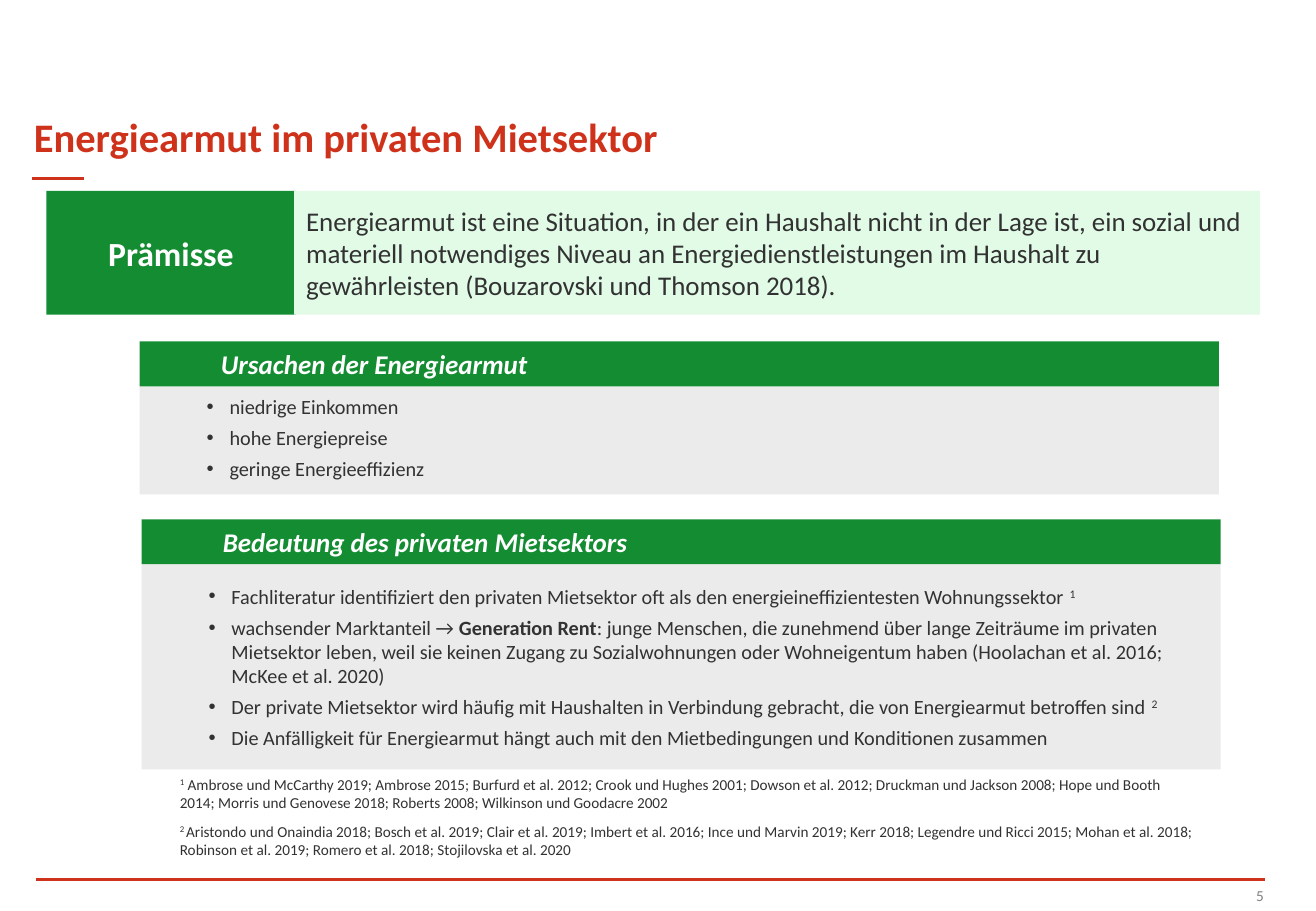
from lxml.etree import SubElement as Sub
from pptx import Presentation
from pptx.dml.color import RGBColor as RGB
from pptx.enum.shapes import MSO_CONNECTOR as Link, MSO_SHAPE as Form
from pptx.enum.text import MSO_ANCHOR as Anchor, PP_ALIGN as Align
from pptx.oxml.ns import qn
from pptx.util import Cm, Pt

HUES = {"red": "CE321A", "green": "148C32", "mint": "E1FBE7",
        "grey": "EBEBEB", "ink": "323232", "white": "FFFFFF", "mute": "808080"}
HANG = Cm(0.48)
INSET = (0.25, 0.13, 0.25, 0.13)
RAISE = {"raised": True}
BOLD = {"bold": True}


class Board:
    """Holds the style and the current slide."""

    def __init__(self, width, height, face):
        self.deck = Presentation()
        self.deck.slide_width, self.deck.slide_height = Cm(width), Cm(height)
        self.slide = self.deck.slides.add_slide(self.deck.slide_layouts[6])
        self.face = face

    def hue(self, name):
        return RGB.from_string(HUES[name])

    def run(self, para, text, size, color, raised=False, **style):
        run = para.add_run()
        run.text = text
        form = {"name": self.face, "size": Pt(size), **style}
        for key, value in form.items():
            setattr(run.font, key, value)
        run.font.color.rgb = self.hue(color)
        if raised:
            run.font._element.set("baseline", "30000")

    def dot(self, para):
        props = para._p.get_or_add_pPr()
        for key, value in {"marL": HANG, "indent": -HANG}.items():
            props.set(key, str(int(value)))
        Sub(props, qn("a:buFont")).set("typeface", "Arial")
        Sub(props, qn("a:buChar")).set("char", "•")

    def fill(self, shape, paras, size, color, inset=INSET, anchor=Anchor.MIDDLE,
             align=Align.LEFT, after=0, dots=False, **style):
        frame = shape.text_frame
        left, top, right, low = map(Cm, inset)
        form = {"word_wrap": True, "vertical_anchor": anchor, "margin_left": left,
                "margin_top": top, "margin_right": right, "margin_bottom": low}
        for key, value in form.items():
            setattr(frame, key, value)
        for i, runs in enumerate(paras):
            para = frame.add_paragraph() if i else frame.paragraphs[0]
            para.alignment, para.space_after = align, Pt(after)
            if dots:
                self.dot(para)
            for text, extra in runs:
                self.run(para, text, size, color, **{**style, **extra})

    def text(self, area, paras, size, color, **style):
        box = self.slide.shapes.add_textbox(*map(Cm, area))
        self.fill(box, paras, size, color, **style)

    def block(self, area, back, paras, size, color, **style):
        shape = self.slide.shapes.add_shape(Form.RECTANGLE, *map(Cm, area))
        shape.shadow.inherit = False
        shape.fill.solid()
        shape.fill.fore_color.rgb = self.hue(back)
        shape.line.fill.background()
        self.fill(shape, paras, size, color, **style)

    def rule(self, left, right, y):
        line = self.slide.shapes.add_connector(
            Link.STRAIGHT, Cm(left), Cm(y), Cm(right), Cm(y))
        line.line.color.rgb = self.hue("red")
        line.line.width = Pt(1.5)
        Sub(line._element.spPr, qn("a:effectLst"))

    def panel(self, left, top, head, body, height, pad):
        wide, tall = 22.56, 0.94
        self.block((left, top + tall, wide, height), "grey", body, 12, "ink",
                   inset=(1.4, pad, 0.1, 0.13), after=4, dots=True)
        self.block((left, top, wide, tall), "green", [[(head, {})]], 16, "white",
                   inset=(1.7, 0.13, 0.25, 0.13), anchor=Anchor.TOP,
                   bold=True, italic=True)


def main():
    board = Board(27.51, 19.05, "Calibri")

    # Title, rules and page number
    board.text((0.46, 1.09, 22.63, 2.39), [[("Energiearmut im privaten Mietsektor", {})]],
               24, "red", anchor=Anchor.BOTTOM, bold=True)
    board.rule(0.66, 1.75, 3.73)
    board.rule(0.76, 26.44, 18.39)
    board.text((20.75, 18.24, 5.92, 0.81), [[("5", {})]], 9, "mute",
               anchor=Anchor.BOTTOM, align=Align.RIGHT)

    # Premise
    board.block((0.97, 3.99, 5.21, 2.59), "green", [[("Prämisse", {})]],
                20, "white", align=Align.CENTER, bold=True)
    board.block((6.15, 3.99, 20.19, 2.59), "mint", [[(
        "Energiearmut ist eine Situation, in der ein Haushalt nicht in der Lage ist, "
        "ein sozial und materiell notwendiges Niveau an Energiedienstleistungen im "
        "Haushalt zu gewährleisten (Bouzarovski und Thomson 2018).", {})]], 16, "ink")

    # Causes
    causes = ("niedrige Einkommen", "hohe Energiepreise", "geringe Energieeffizienz")
    board.panel(2.92, 7.14, "Ursachen der Energiearmut",
                [[(cause, {})] for cause in causes], 2.26, 0)

    # Private rental sector
    points = [
        [("Fachliteratur identifiziert den privaten Mietsektor oft als den "
          "energieineffizientesten Wohnungssektor ", {}), ("1", RAISE)],
        [("wachsender Marktanteil → ", {}), ("Generation Rent", BOLD),
         (": junge Menschen, die zunehmend über lange Zeiträume im privaten Mietsektor "
          "leben, weil sie keinen Zugang zu Sozialwohnungen oder Wohneigentum haben "
          "(Hoolachan et al. 2016; McKee et al. 2020)", {})],
        [("Der private Mietsektor wird häufig mit Haushalten in Verbindung gebracht, "
          "die von Energiearmut betroffen sind ", {}), ("2", RAISE)],
        [("Die Anfälligkeit für Energiearmut hängt auch mit den Mietbedingungen und "
          "Konditionen zusammen", {})],
    ]
    board.panel(2.96, 10.86, "Bedeutung des privaten Mietsektors", points, 4.29, 0.13)

    # Footnotes
    notes = [
        [("1", RAISE),
         (" Ambrose und McCarthy 2019; Ambrose 2015; Burfurd et al. 2012; Crook und "
          "Hughes 2001; Dowson et al. 2012; Druckman und Jackson 2008; Hope und Booth "
          "2014; Morris und Genovese 2018; Roberts 2008; Wilkinson und Goodacre 2002", {})],
        [("2 ", RAISE),
         ("Aristondo und Onaindia 2018; Bosch et al. 2019; Clair et al. 2019; Imbert et "
          "al. 2016; Ince und Marvin 2019; Kerr 2018; Legendre und Ricci 2015; Mohan et "
          "al. 2018; Robinson et al. 2019; Romero et al. 2018; Stojilovska et al. 2020", {})],
    ]
    board.text((3.56, 16.08, 21.62, 2.01), notes, 9, "ink",
               inset=(0.2, 0.13, 0.2, 0.13), anchor=Anchor.TOP, after=6)

    board.deck.save("out.pptx")


if __name__ == "__main__":
    main()
